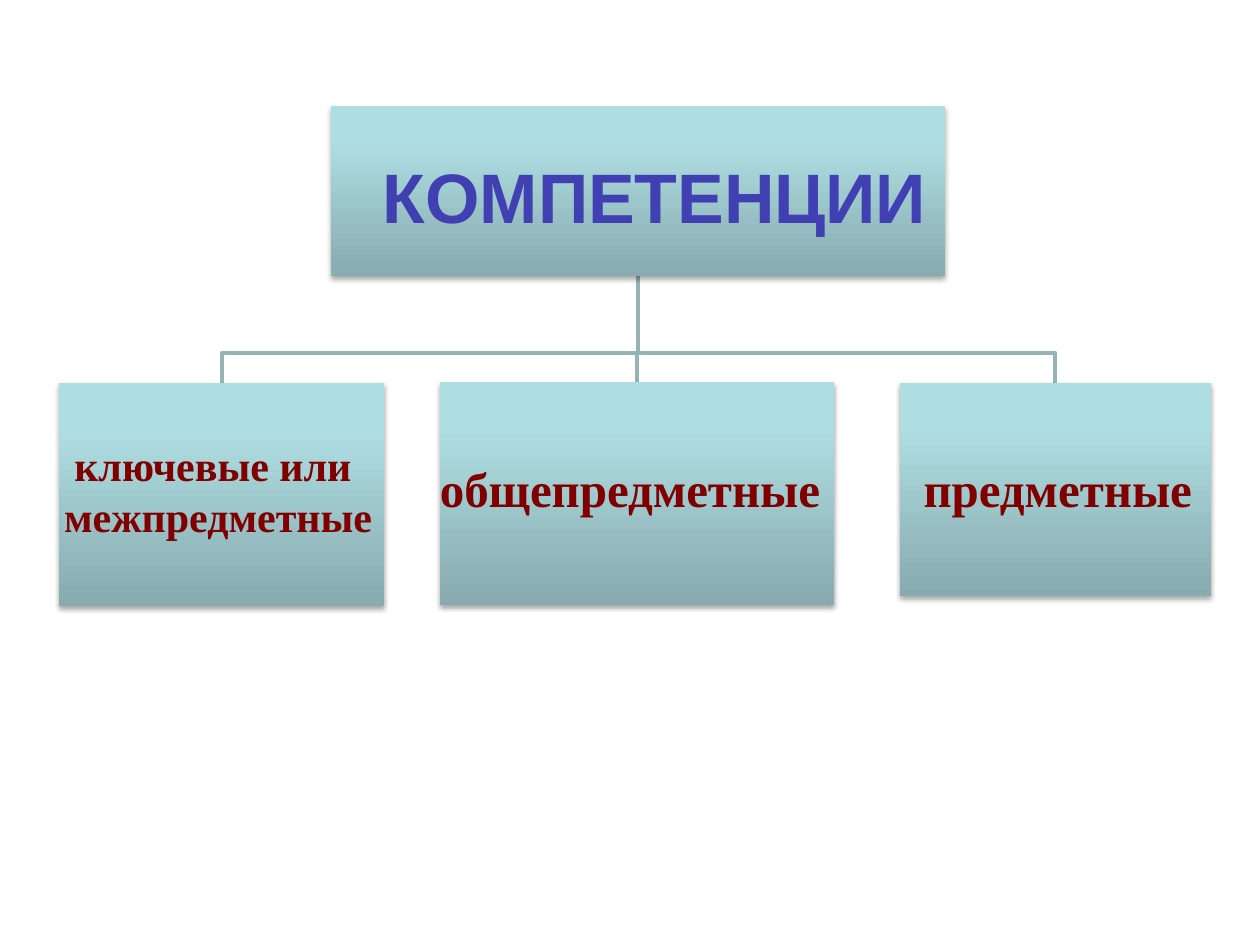
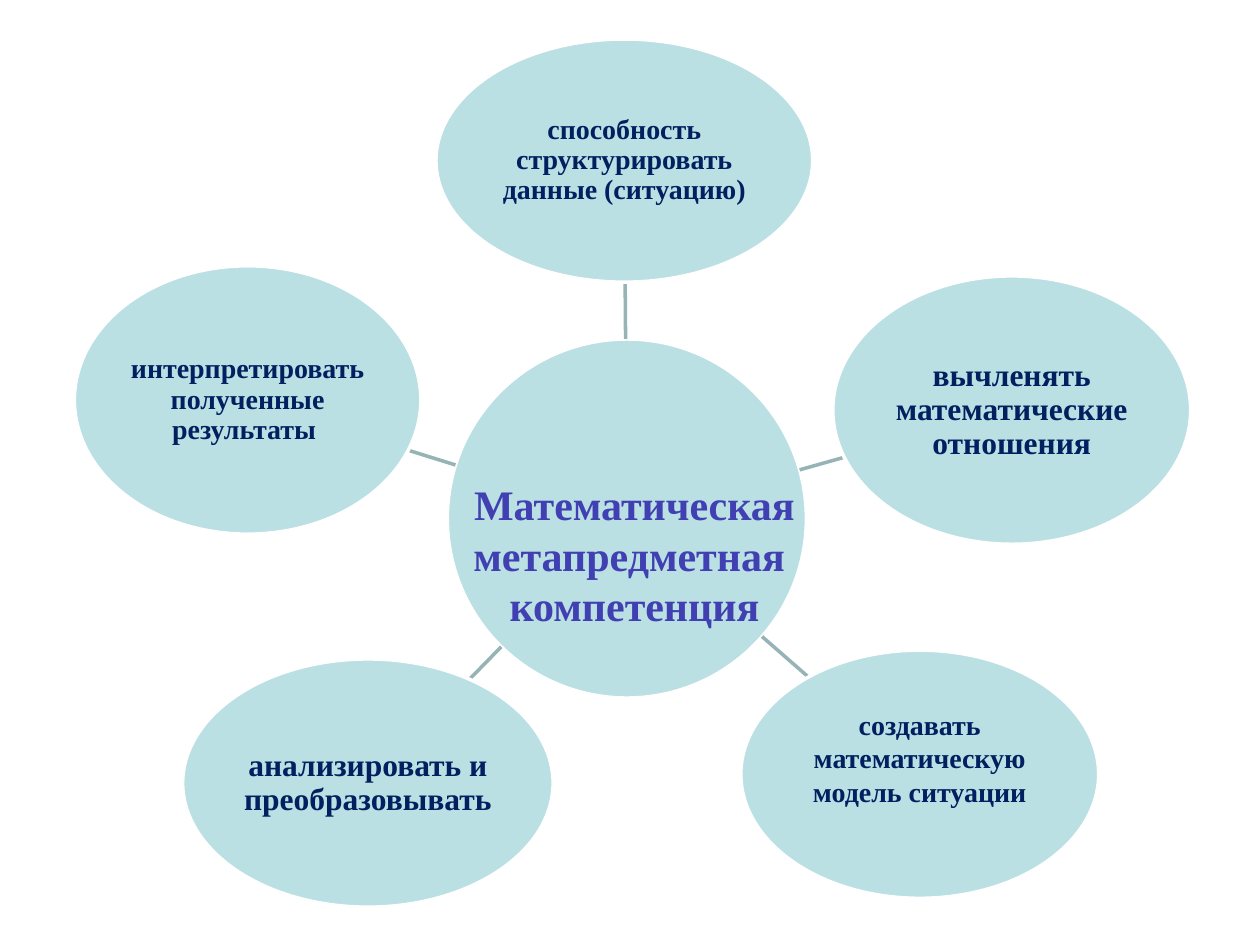
from math import hypot

from lxml import etree
from pptx import Presentation
from pptx.dml.color import RGBColor
from pptx.enum import shapes, text
from pptx.oxml import ns
from pptx.util import Inches, Pt

COLORS = {
    "heading": "4040B3",
    "branch": "800000",
    "skill": "002060",
    "line": "96B3B6",
    "ellipse": "BBE0E3",
    "outline": "FFFFFF",
    "shadow": "000000",
}
NODE_GRADIENT = [(0, "87ABAE"), (80, "AFDEE2"), (100, "AFE0E4")]
SERIF = "Times New Roman"


def color(name):
    return RGBColor.from_string(COLORS[name])


def inches(values):
    return [Inches(value) for value in values]


def shifted(origin, rect):
    return (origin[0] + rect[0], origin[1] + rect[1], *rect[2:])


def center(rect):
    left, top, width, height = rect
    return left + width / 2, top + height / 2


def ellipse_edge(rect, target):
    x, y = center(rect)
    dx, dy = target[0] - x, target[1] - y
    reach = hypot(2 * dx / rect[2], 2 * dy / rect[3])
    return x + dx / reach, y + dy / reach


def add_xml(parent, tag, **attributes):
    return etree.SubElement(parent, ns.qn(tag), {key: str(value) for key, value in attributes.items()})


def write(shape, lines, size, tint, font=SERIF, spacing=None, anchor=text.MSO_ANCHOR.TOP, insets=None):
    frame = shape.text_frame
    frame.word_wrap = True
    frame.auto_size = text.MSO_AUTO_SIZE.NONE
    frame.vertical_anchor = anchor
    if insets:
        frame.margin_left, frame.margin_top, frame.margin_right, frame.margin_bottom = inches(insets)
    frame.text = lines
    for paragraph in frame.paragraphs:
        paragraph.alignment = text.PP_ALIGN.CENTER
        if spacing:
            paragraph.line_spacing = spacing
        paragraph.font.name = font
        paragraph.font.size = Pt(size)
        paragraph.font.bold = True
        paragraph.font.color.rgb = color(tint)


def write_title(slide, rect, lines, size, font=SERIF):
    title = slide.shapes.title
    title.left, title.top, title.width, title.height = inches(rect)
    write(title, lines, size, "heading", font=font)
    slide.shapes._spTree.append(title._element)


def style_line(line, tint):
    line.color.rgb = color(tint)
    line.width = Pt(2)


def add_spoke(slide, start, end):
    spoke = slide.shapes.add_connector(shapes.MSO_CONNECTOR.STRAIGHT, *inches((*start, *end)))
    style_line(spoke.line, "line")
    add_xml(spoke._element.spPr, "a:effectLst")


def add_bent_line(slide, start, bend_y, end):
    builder = slide.shapes.build_freeform(*inches(start))
    corners = [(start[0], bend_y), (end[0], bend_y), end]
    builder.add_line_segments([inches(corner) for corner in corners], close=False)
    bent_line = builder.convert_to_shape()
    bent_line.fill.background()
    style_line(bent_line.line, "line")
    bent_line.shadow.inherit = False


def add_node(slide, rect):
    node = slide.shapes.add_shape(shapes.MSO_SHAPE.RECTANGLE, *inches(rect))
    node.line.fill.background()
    node.fill.gradient()
    node.fill.gradient_angle = 90
    properties = node._element.spPr
    stops = properties.find(".//" + ns.qn("a:gsLst"))
    for stop in list(stops):
        stops.remove(stop)
    for position, tint in NODE_GRADIENT:
        stop = add_xml(stops, "a:gs", pos=position * 1000)
        add_xml(stop, "a:srgbClr", val=tint)
    node.shadow.inherit = False
    shadow = add_xml(properties.find(ns.qn("a:effectLst")), "a:outerShdw",
                     blurRad=Pt(3.1), dist=Pt(1.8), dir=5400000, rotWithShape=0)
    tint = add_xml(shadow, "a:srgbClr", val=COLORS["shadow"])
    add_xml(tint, "a:alpha", val=35000)


def add_ellipse(slide, rect):
    ellipse = slide.shapes.add_shape(shapes.MSO_SHAPE.OVAL, *inches(rect))
    ellipse.shadow.inherit = False
    ellipse.fill.solid()
    ellipse.fill.fore_color.rgb = color("ellipse")
    style_line(ellipse.line, "outline")
    return ellipse


def competence_tree(slide, origin):
    root_rect = shifted(origin, (2.16, 0, 4.87, 1.35))
    branches = [
        ((0, 2.2, 2.58, 1.77), (-0.16, 0.4, 2.76, 0.91), "ключевые или\n межпредметные", 24),
        ((3.02, 2.19, 3.13, 1.77), (-0.13, 0.56, 3.28, 0.57), "общепредметные", 28),
        ((6.67, 2.2, 2.47, 1.69), (-0.03, 0.55, 2.57, 0.57), "предметные", 28),
    ]
    bend_y = origin[1] + 1.96
    root_bottom = (center(root_rect)[0], root_rect[1] + root_rect[3])
    rects = [shifted(origin, branch[0]) for branch in branches]

    for rect in rects:
        add_bent_line(slide, root_bottom, bend_y, (center(rect)[0], rect[1]))
    for rect in (root_rect, *rects):
        add_node(slide, rect)
    for rect, (_, label_rect, label, size) in zip(rects, branches):
        label_box = slide.shapes.add_textbox(*inches(shifted(rect, label_rect)))
        write(label_box, label, size, "branch")
    write_title(slide, shifted(root_rect, (0.26, 0.33, 4.61, 0.77)), "КОМПЕТЕНЦИИ", 40, font="Arial")


def competence_wheel(slide, origin):
    hub_rect = shifted(origin, (2.96, 2.38, 2.85, 2.85))
    skills = [
        ((2.87, 0, 2.99, 1.93), "способность структурировать данные (ситуацию)", 16, 0.9, 0.01),
        ((5.29, 4.85, 2.84, 1.97), "создавать математическую модель ситуации", 16, 1.0, 0.27),
        ((6.02, 1.88, 2.84, 2.13), "вычленять математические отношения", 18, 0.9, 0.01),
        ((0.86, 4.92, 2.94, 1.97), "анализировать и преобразовывать", 18, 0.9, 0.01),
        ((0, 1.8, 2.75, 2.13), "интерпретировать полученные результаты ", 16, 0.9, 0.01),
    ]
    add_ellipse(slide, hub_rect)
    for offset, label, size, spacing, bottom in skills:
        rect = shifted(origin, offset)
        add_spoke(slide, ellipse_edge(hub_rect, center(rect)), ellipse_edge(rect, center(hub_rect)))
        write(add_ellipse(slide, rect), label, size, "skill", spacing=spacing,
              anchor=text.MSO_ANCHOR.MIDDLE, insets=(0.01, 0.01, 0.01, bottom))
    write_title(slide, shifted(hub_rect, (0.04, 1.06, 2.89, 1.31)),
                "Математическая метапредметная \nкомпетенция", 24)


def main():
    presentation = Presentation()
    presentation.slide_width, presentation.slide_height = inches((10, 7.5))
    title_only = presentation.slide_layouts[5]
    for build, origin in ((competence_tree, (0.47, 0.84)), (competence_wheel, (0.59, 0.31))):
        build(presentation.slides.add_slide(title_only), origin)
    presentation.save("out.pptx")


if __name__ == "__main__":
    main()
